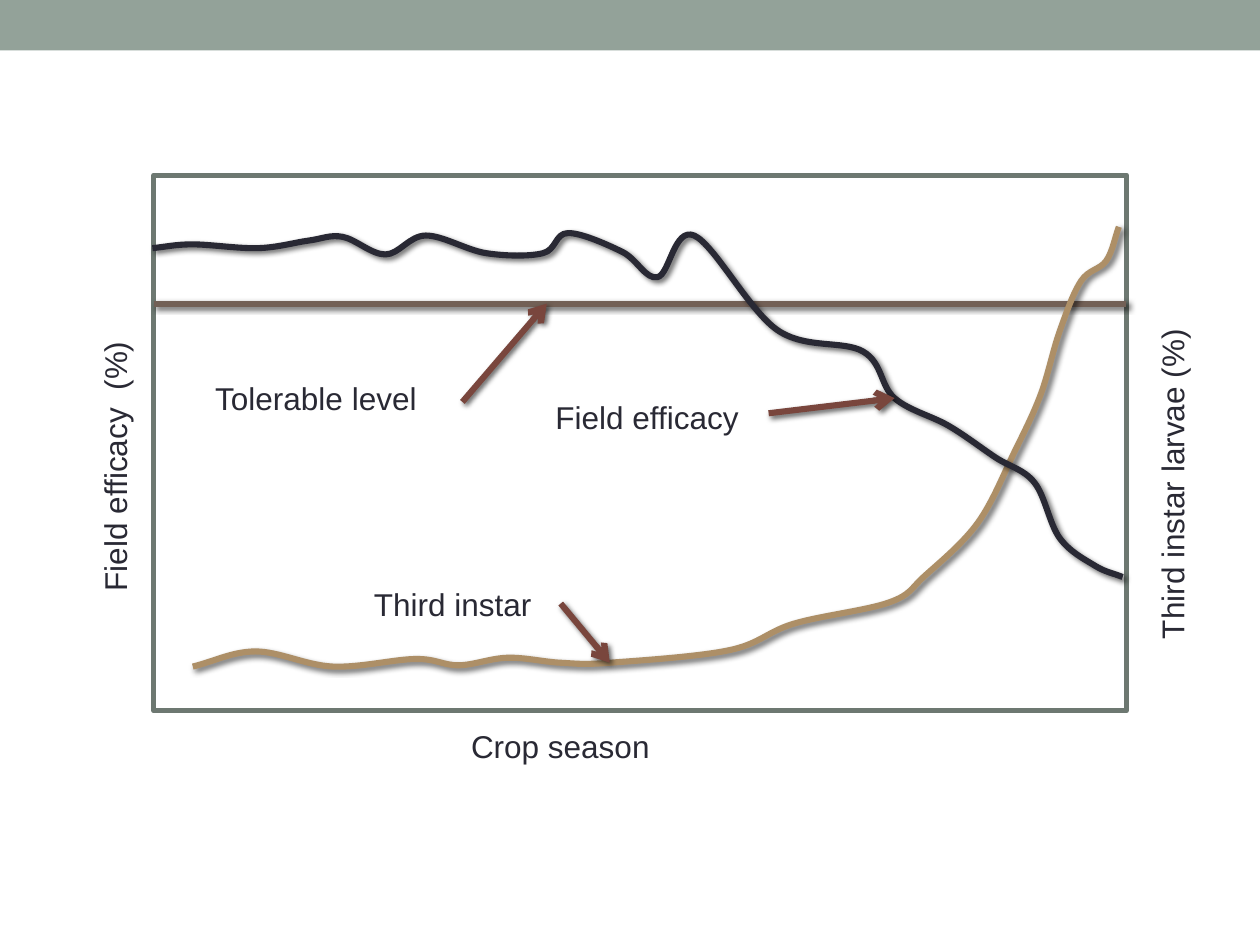
from lxml import etree
from pptx import Presentation
from pptx import util as u
from pptx.dml.color import RGBColor
from pptx.enum import shapes, text
from pptx.oxml.ns import qn

INK, ARROW, TAN = "292934", "79463D", "AD8F67"


def color(value):
    return RGBColor.from_string(value)


def style_line(shape, value, arrow=False):
    """Thick line with a soft shadow and, if wanted, an arrowhead."""
    shape.line.color.rgb = color(value)
    shape.line.width = u.Pt(3.5)
    properties = shape._element.spPr
    if arrow:
        etree.SubElement(properties.find(qn("a:ln")), qn("a:tailEnd"), type="arrow")
    effects = etree.SubElement(properties, qn("a:effectLst"))
    shadow = etree.SubElement(effects, qn("a:outerShdw"), blurRad=str(u.Pt(3)),
                              dist=str(u.Pt(2)), dir="2700000", rotWithShape="0")
    black = etree.SubElement(shadow, qn("a:srgbClr"), val="000000")
    etree.SubElement(black, qn("a:alpha"), val="60000")


presentation = Presentation()
presentation.slide_width, presentation.slide_height = u.Inches(10), u.Inches(7.5)
slide = presentation.slides.add_slide(presentation.slide_layouts[6])

# Top band
band = slide.shapes.add_shape(shapes.MSO_SHAPE.RECTANGLE, 0, 0, u.Inches(10), u.Inches(0.4))
band.shadow.inherit = False
band.fill.solid()
band.fill.fore_color.rgb = color("93A299")
band.line.fill.background()

# Plot frame
frame = slide.shapes.add_shape(shapes.MSO_SHAPE.RECTANGLE, u.Inches(1.22), u.Inches(1.39),
                               u.Inches(7.72), u.Inches(4.25))
frame.shadow.inherit = False
frame.fill.background()
frame.line.color.rgb = color("6D7871")
frame.line.width = u.Pt(3)
etree.SubElement(frame._element.spPr.find(qn("a:ln")), qn("a:round"))

# Tolerable level
level = slide.shapes.add_connector(shapes.MSO_CONNECTOR.STRAIGHT, u.Inches(1.22), u.Inches(2.41),
                                   u.Inches(8.94), u.Inches(2.41))
style_line(level, "726056")

# Curves: knots joined by a smooth spline
third_instar = [
    (1.53, 5.29), (2.03, 5.17), (2.64, 5.29), (3.3, 5.23), (3.64, 5.28), (4.03, 5.22),
    (4.45, 5.26), (4.84, 5.26), (5.79, 5.16), (6.3, 4.95), (7.06, 4.78), (7.34, 4.57),
    (7.76, 4.15), (8.05, 3.59), (8.26, 3.13), (8.41, 2.63), (8.58, 2.23), (8.78, 2.07),
    (8.88, 1.8)]
field_efficacy = [
    (1.21, 1.97), (1.53, 1.94), (2.05, 1.97), (2.45, 1.91), (2.72, 1.88), (3.06, 2.02),
    (3.38, 1.87), (3.86, 2.01), (4.31, 2.01), (4.51, 1.85), (4.94, 2), (5.22, 2.2),
    (5.51, 1.87), (6.17, 2.62), (6.85, 2.79), (7.1, 3.16), (7.53, 3.38), (7.9, 3.63),
    (8.21, 3.83), (8.41, 4.27), (8.69, 4.49), (8.91, 4.58)]
for knots, value in ((third_instar, TAN), (field_efficacy, INK)):
    points = [(u.Inches(x), u.Inches(y)) for x, y in knots]
    builder = slide.shapes.build_freeform(*points[0])
    builder.add_line_segments(points[1:], close=False)
    curve = builder.convert_to_shape()
    curve.fill.background()
    style_line(curve, value)

    # Turn each straight segment into a Bezier; tangents follow the neighbouring knots
    outline = curve._element.spPr.find(".//" + qn("a:path"))
    local = [(int(point.get("x")), int(point.get("y"))) for point in outline.iter(qn("a:pt"))]
    last = len(local) - 1
    tangents = []
    for i in range(last + 1):
        before, after = max(i - 1, 0), min(i + 1, last)
        tangents.append([(local[after][k] - local[before][k]) / (3 * (after - before))
                         for k in (0, 1)])
    for i, segment in enumerate(outline.findall(qn("a:lnTo"))):
        bezier = etree.Element(qn("a:cubicBezTo"))
        start, end = local[i], local[i + 1]
        controls = ([start[k] + tangents[i][k] for k in (0, 1)],
                    [end[k] - tangents[i + 1][k] for k in (0, 1)], end)
        for x, y in controls:
            etree.SubElement(bezier, qn("a:pt"), x=str(round(x)), y=str(round(y)))
        outline.replace(segment, bezier)

# Axis titles and curve labels: wording, left, top, width, rotation
labels = [
    ("Crop season", 3.64, 5.72, 1.76, 0),
    ("Field efficacy  (%)", -0.39, 3.29, 2.6, 270),
    ("Third instar larvae (%)", 7.68, 3.35, 3.24, 270),
    ("Third instar", 2.87, 4.59, 1.66, 0),
    ("Field efficacy", 4.31, 3.11, 1.85, 0),
    ("Tolerable level", 1.61, 2.96, 2.01, 0)]
for wording, left, top, width, rotation in labels:
    label = slide.shapes.add_textbox(u.Inches(left), u.Inches(top), u.Inches(width), u.Inches(0.4))
    label.rotation = rotation
    label.text_frame.text = wording
    label.text_frame.word_wrap = rotation != 0
    label.text_frame.auto_size = text.MSO_AUTO_SIZE.SHAPE_TO_FIT_TEXT
    font = label.text_frame.paragraphs[0].runs[0].font
    font.name, font.size = "Arial", u.Pt(18)
    font.color.rgb = color(INK)

# Arrows from the labels to the curves
for ends in ((4.45, 4.79, 4.84, 5.26), (6.1, 3.28, 7.1, 3.16), (3.67, 3.19, 4.34, 2.41)):
    arrow = slide.shapes.add_connector(shapes.MSO_CONNECTOR.STRAIGHT, *map(u.Inches, ends))
    style_line(arrow, ARROW, arrow=True)

presentation.save("out.pptx")
